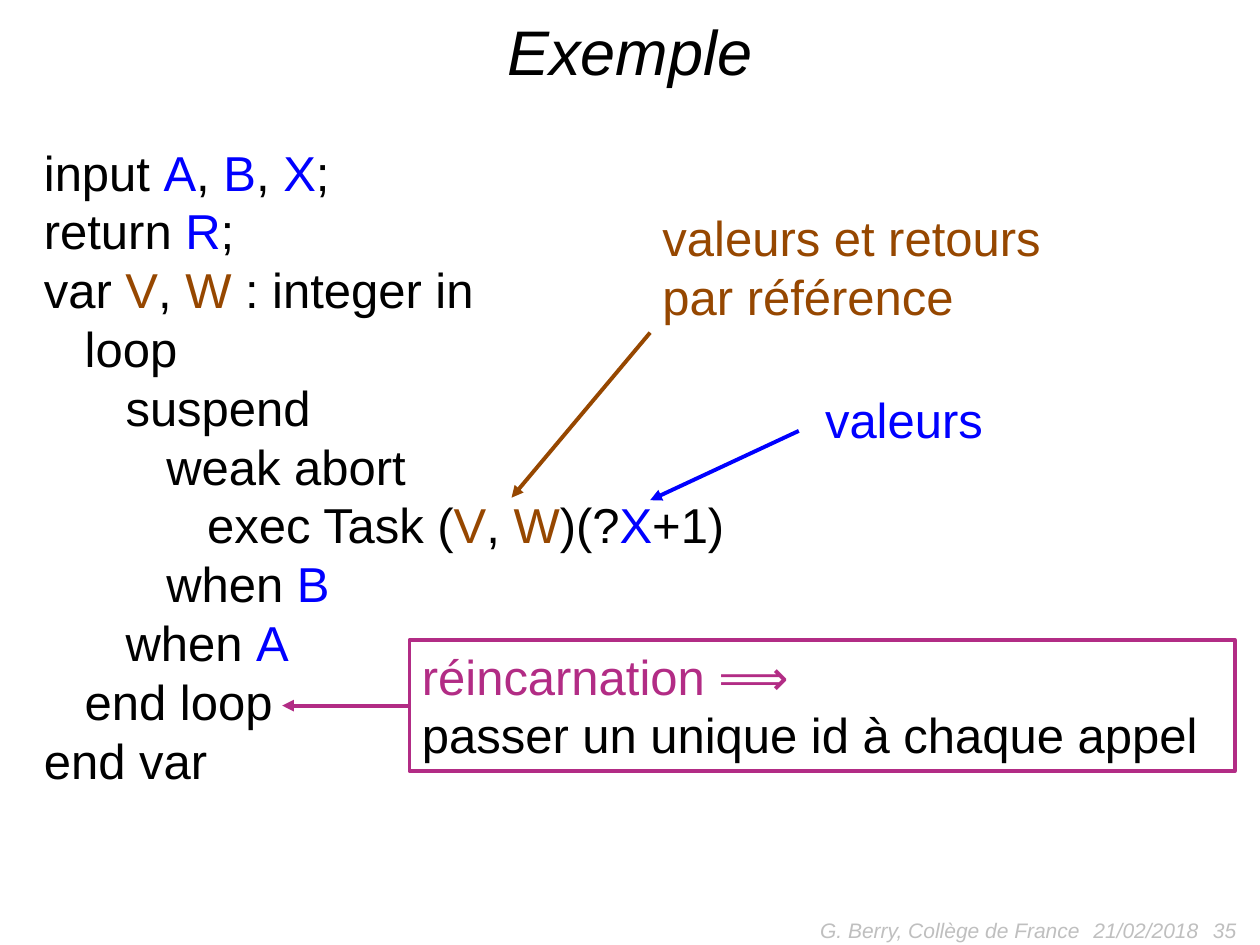
from lxml import etree
from pptx import Presentation
from pptx.dml.color import RGBColor
from pptx.enum.shapes import MSO_CONNECTOR, MSO_SHAPE
from pptx.enum.text import MSO_ANCHOR, PP_ALIGN
from pptx.oxml.ns import qn
from pptx.util import Inches, Pt

LEFT, CENTER, RIGHT = PP_ALIGN.LEFT, PP_ALIGN.CENTER, PP_ALIGN.RIGHT
TOP, MIDDLE = MSO_ANCHOR.TOP, MSO_ANCHOR.MIDDLE
RECTANGLE, STRAIGHT = MSO_SHAPE.RECTANGLE, MSO_CONNECTOR.STRAIGHT

FONT = "Arial"
LINE_HEIGHT = 1.2  # times the font size
INDENT = 0.324  # inches per nesting level
LINE_WIDTH = 2.25
COLORS = {
    "text": "000000",
    "signal": "0000FF",
    "variable": "964700",
    "note": "B22C85",
    "footer": "BFBFBF",
}

# Content: a paragraph is (nesting level, runs), a run is (text, colour)
A, B, X, R = [(name, "signal") for name in "ABXR"]
V, W = [(name, "variable") for name in "VW"]
COMMA, SEMICOLON = (", ", "text"), (";", "text")

CODE = [
    (0, [("input ", "text"), A, COMMA, B, COMMA, X, SEMICOLON]),
    (0, [("return ", "text"), R, SEMICOLON]),
    (0, [("var ", "text"), V, COMMA, W, (" : integer in", "text")]),
    (1, [("loop", "text")]),
    (2, [("suspend", "text")]),
    (3, [("weak abort", "text")]),
    (4, [("exec Task (", "text"), V, COMMA, W, (")(?", "text"), X, ("+1)", "text")]),
    (3, [("when ", "text"), B]),
    (2, [("when ", "text"), A]),
    (1, [("end loop", "text")]),
    (0, [("end var", "text")]),
]
TITLE = [(0, [("Exemple", "text")])]
REFERENCES = [
    (0, [("valeurs et retours", "variable")]),
    (0, [("par référence", "variable")]),
]
VALUES = [(0, [("valeurs", "signal")])]
REINCARNATION = [
    (0, [("réincarnation ⟹", "note")]),
    (0, [("passer un unique id à chaque appel", "text")]),
]
# Footer: text, left, width, alignment
FOOTERS = [
    ("G. Berry, Collège de France", 5.5, 3.17, RIGHT),
    ("21/02/2018", 8.58, 2.33, LEFT),
    ("35", 7.58, 2.33, RIGHT),
]


def write(shape, paragraphs, size=28, italic=False, align=LEFT, anchor=TOP):
    frame = shape.text_frame
    frame.word_wrap = True
    frame.vertical_anchor = anchor
    for index, (level, runs) in enumerate(paragraphs):
        paragraph = frame.add_paragraph() if index else frame.paragraphs[0]
        paragraph.alignment = align
        paragraph.line_spacing = Pt(LINE_HEIGHT * size)
        if level:
            properties = paragraph._p.get_or_add_pPr()
            properties.set("marL", str(Inches(level * INDENT)))
            properties.set("indent", "0")
        for text, color in runs:
            run = paragraph.add_run()
            run.text = text
            run.font.name = FONT
            run.font.size = Pt(size)
            run.font.italic = italic
            run.font.color.rgb = RGBColor.from_string(COLORS[color])


def add_text(slide, box, paragraphs, **text_format):
    shape = slide.shapes.add_textbox(*map(Inches, box))
    write(shape, paragraphs, **text_format)


def style_line(line, color):
    line.color.rgb = RGBColor.from_string(COLORS[color])
    line.width = Pt(LINE_WIDTH)


def add_arrow(slide, start, end, color):
    arrow = slide.shapes.add_connector(STRAIGHT, *map(Inches, start + end))
    style_line(arrow.line, color)
    etree.SubElement(arrow.line._get_or_add_ln(), qn("a:tailEnd"), type="triangle")
    etree.SubElement(arrow._element.spPr, qn("a:effectLst"))
    return arrow


def main():
    presentation = Presentation()
    presentation.slide_width = Inches(10)
    presentation.slide_height = Inches(7.5)
    slide = presentation.slides.add_slide(presentation.slide_layouts[6])

    # Footer
    for text, left, width, align in FOOTERS:
        add_text(slide, (left, 7.18, width, 0.4), [(0, [(text, "footer")])],
                 size=12, italic=True, align=align, anchor=MIDDLE)

    # Title and program
    add_text(slide, (0.25, 0.05, 9.5, 0.71), TITLE, size=36, italic=True, align=CENTER)
    add_text(slide, (0.25, 1.08, 5.71, 5.76), CODE)

    # Notes on the arguments of the task
    add_arrow(slide, (5.16, 2.64), (4.06, 3.95), "variable")
    add_text(slide, (5.16, 1.6, 3.24, 1.04), REFERENCES)
    add_text(slide, (6.45, 3.04, 1.47, 0.57), VALUES)
    add_arrow(slide, (6.34, 3.42), (5.16, 3.97), "signal")

    # Framed note on the end of the loop
    frame = slide.shapes.add_shape(RECTANGLE, *map(Inches, (3.25, 5.08, 6.55, 1.04)))
    frame.shadow.inherit = False
    frame.fill.background()
    style_line(frame.line, "note")
    write(frame, REINCARNATION)
    arrow = add_arrow(slide, (3.25, 5.6), (2.24, 5.6), "note")
    arrow.begin_connect(frame, 1)

    presentation.save("out.pptx")


if __name__ == "__main__":
    main()
